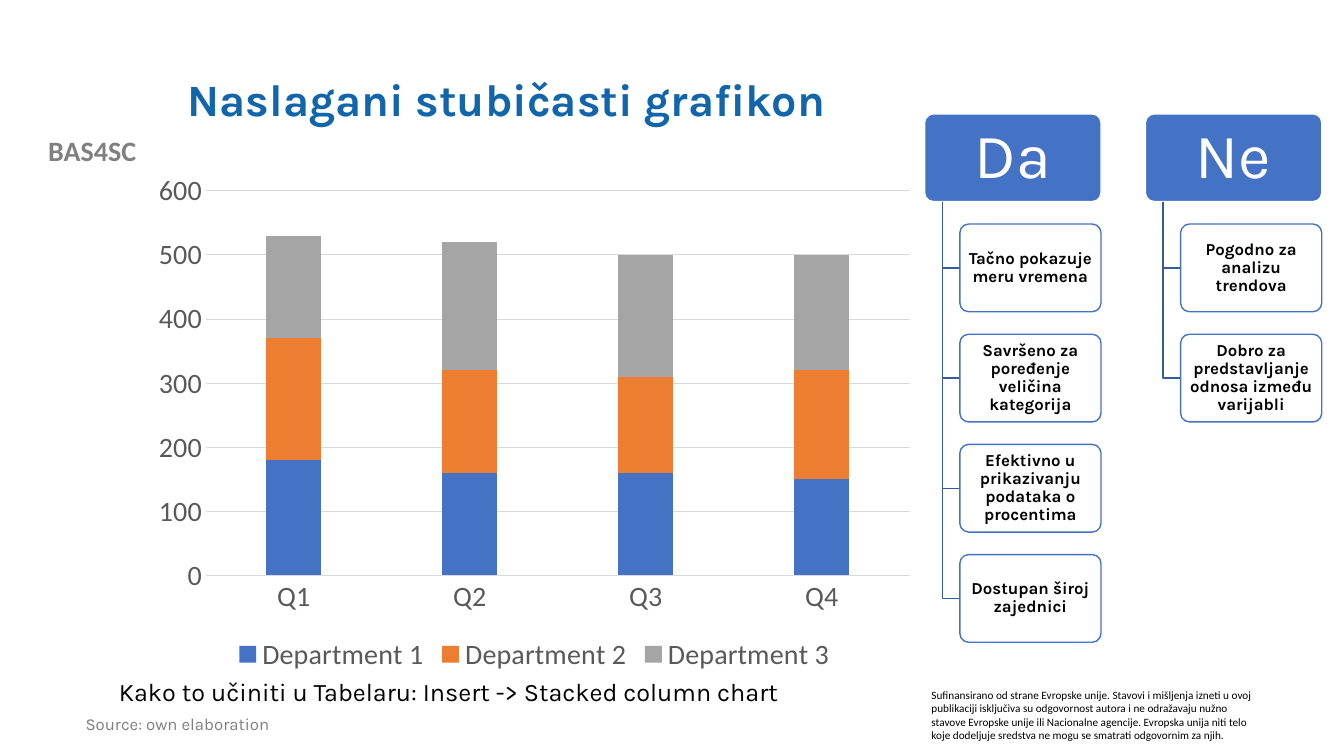
from lxml import etree
from pptx import Presentation
from pptx.chart.data import CategoryChartData
from pptx.dml.color import RGBColor
from pptx.enum.chart import XL_CHART_TYPE as ChartType, XL_LEGEND_POSITION as LegendPosition
from pptx.enum.chart import XL_TICK_MARK as TickMark
from pptx.enum.shapes import MSO_SHAPE as Preset
from pptx.enum.text import MSO_ANCHOR as Anchor, PP_ALIGN as Align
from pptx.oxml.ns import qn
from pptx.util import Inches, Pt

COLORS = {
    "white": "FFFFFF", "black": "000000", "title": "1065AB", "project": "808080",
    "source": "7F7F7F", "axis": "595959", "grid": "D9D9D9", "branch": "365B9D",
    "blue": "4472C4", "orange": "ED7D31", "gray": "A5A5A5",
}
DEPARTMENTS = [
    ("Department 1", (180, 160, 160, 150), "blue"),
    ("Department 2", (190, 160, 150, 170), "orange"),
    ("Department 3", (160, 200, 190, 180), "gray"),
]
VERDICTS = {
    "Da": [
        "Tačno pokazuje meru vremena",
        "Savršeno za poređenje veličina kategorija",
        "Efektivno u prikazivanju podataka o procentima",
        "Dostupan široj zajednici",
    ],
    "Ne": [
        "Pogodno za analizu trendova",
        "Dobro za predstavljanje odnosa između varijabli",
    ],
}
DISCLAIMER = (
    "Sufinansirano od strane Evropske unije. Stavovi i mišljenja izneti u ovoj publikaciji "
    "isključiva su odgovornost autora i ne odražavaju nužno stavove Evropske unije ili "
    "Nacionalne agencije. Evropska unija niti telo koje dodeljuje sredstva ne mogu se "
    "smatrati odgovornim za njih."
)


def color(name):
    return RGBColor.from_string(COLORS[name])


def apply(target, values):
    for attribute, value in values.items():
        setattr(target, attribute, value)


def style_font(font, size, color_name, name="Karla", bold=False):
    apply(font, {"size": Pt(size), "name": name, "bold": bold})
    font.color.rgb = color(color_name)


def style_line(line, color_name, width):
    line.color.rgb = color(color_name)
    line.width = Pt(width)


def write(frame, text, font, align=Align.LEFT, anchor=Anchor.TOP, spacing=1.0, inset=(0.1, 0.05)):
    side, end = (Inches(length) for length in inset)
    apply(frame, {
        "word_wrap": True, "vertical_anchor": anchor, "margin_left": side,
        "margin_right": side, "margin_top": end, "margin_bottom": end,
    })
    paragraph = frame.paragraphs[0]
    apply(paragraph, {"alignment": align, "line_spacing": spacing})
    run = paragraph.add_run()
    run.text = text
    style_font(run.font, **font)


def add_label(slide, box, text, font, **layout):
    label = slide.shapes.add_textbox(*map(Inches, box))
    write(label.text_frame, text, font, **layout)


def add_title(slide, box, text):
    title = slide.shapes.title
    apply(title, dict(zip(("left", "top", "width", "height"), map(Inches, box))))
    write(title.text_frame, text, {"size": 32, "color_name": "title", "bold": True},
          anchor=Anchor.MIDDLE, spacing=0.9)


def add_department_chart(slide, box):
    data = CategoryChartData()
    data.categories = ["Q1", "Q2", "Q3", "Q4"]
    for name, values, _ in DEPARTMENTS:
        data.add_series(name, values)
    chart = slide.shapes.add_chart(ChartType.COLUMN_STACKED, *map(Inches, box), data).chart
    apply(chart, {"has_title": False, "has_legend": True})
    style_font(chart.font, 20, "axis", "Calibri")
    apply(chart.legend, {"position": LegendPosition.BOTTOM, "include_in_layout": False})
    style_font(chart.legend.font, 20, "axis", "Calibri")

    plot = chart.plots[0]
    apply(plot, {"gap_width": 219, "overlap": 100, "vary_by_categories": False})
    for series, (_, _, fill_name) in zip(plot.series, DEPARTMENTS):
        series.format.fill.solid()
        series.format.fill.fore_color.rgb = color(fill_name)

    quarters, amounts = chart.category_axis, chart.value_axis
    for axis in (quarters, amounts):
        apply(axis, {"major_tick_mark": TickMark.NONE, "minor_tick_mark": TickMark.NONE})
        style_font(axis.tick_labels.font, 20, "axis", "Calibri")
    style_line(quarters.format.line, "grid", 0.75)
    apply(amounts, {"minimum_scale": 0, "maximum_scale": 600, "major_unit": 100,
                    "has_major_gridlines": True})
    amounts.format.line.fill.background()
    style_line(amounts.major_gridlines.format.line, "grid", 0.75)


def add_card(slide, box, text, font, fill_name, line_name, inset, alpha=None):
    card = slide.shapes.add_shape(Preset.ROUNDED_RECTANGLE, *map(Inches, box))
    card.shadow.inherit = False
    card.adjustments[0] = 0.1
    card.fill.solid()
    card.fill.fore_color.rgb = color(fill_name)
    if alpha is not None:
        tint = card.fill._xPr.find(".//" + qn("a:srgbClr"))
        etree.SubElement(tint, qn("a:alpha")).set("val", str(alpha * 1000))
    style_line(card.line, line_name, 1)
    write(card.text_frame, text, font, Align.CENTER, Anchor.MIDDLE, 0.9, inset)


def add_branch(slide, left, top, right, bottom):
    builder = slide.shapes.build_freeform(Inches(left), Inches(top))
    builder.add_line_segments(
        [(Inches(left), Inches(bottom)), (Inches(right), Inches(bottom))], close=False)
    branch = builder.convert_to_shape()
    branch.shadow.inherit = False
    branch.fill.background()
    style_line(branch.line, "branch", 1)


def add_verdict(slide, box, verdict, reasons):
    left, top, width, height = box
    trunk, reason_left = left + width * 0.1, left + width * 0.2
    pitch = 1.093
    add_card(slide, box, verdict, {"size": 45, "color_name": "white"},
             "blue", "white", (0.09, 0.06))
    for row, reason in enumerate(reasons, 1):
        reason_top = top + row * pitch
        add_branch(slide, trunk, top + height, reason_left, reason_top + height / 2)
        add_card(slide, (reason_left, reason_top, width * 0.8, height), reason,
                 {"size": 12, "color_name": "black", "bold": True},
                 "white", "blue", (0.03, 0.02), alpha=90)


def build_slide(presentation):
    slide = presentation.slides.add_slide(presentation.slide_layouts[5])
    slide.background.fill.solid()
    slide.background.fill.fore_color.rgb = color("white")
    add_label(slide, (0, 1.28, 1.83, 0.44), "BAS4SC",
              {"size": 20, "color_name": "project", "name": "Calibri", "bold": True},
              align=Align.CENTER)
    add_label(slide, (9.14, 6.78, 3.44, 0.64), DISCLAIMER,
              {"size": 8, "color_name": "black", "name": "Calibri"})
    add_title(slide, (1.76, 0.4, 10.66, 1.22), "Naslagani stubičasti grafikon")
    add_label(slide, (0.75, 7.05, 5.01, 0.37), "Source: own elaboration",
              {"size": 12, "color_name": "source"}, spacing=0.9)
    add_department_chart(slide, (1.42, 1.62, 7.76, 5.1))
    for column, (verdict, reasons) in enumerate(VERDICTS.items()):
        add_verdict(slide, (9.17 + column * 2.19, 1.13, 1.75, 0.87), verdict, reasons)
    add_label(slide, (1.08, 6.66, 7.88, 0.42),
              "Kako to učiniti u Tabelaru: Insert -> Stacked column chart",
              {"size": 18, "color_name": "black"})


def main():
    presentation = Presentation()
    apply(presentation, {"slide_width": Inches(13.33), "slide_height": Inches(7.5)})
    build_slide(presentation)
    presentation.save("out.pptx")


if __name__ == "__main__":
    main()
